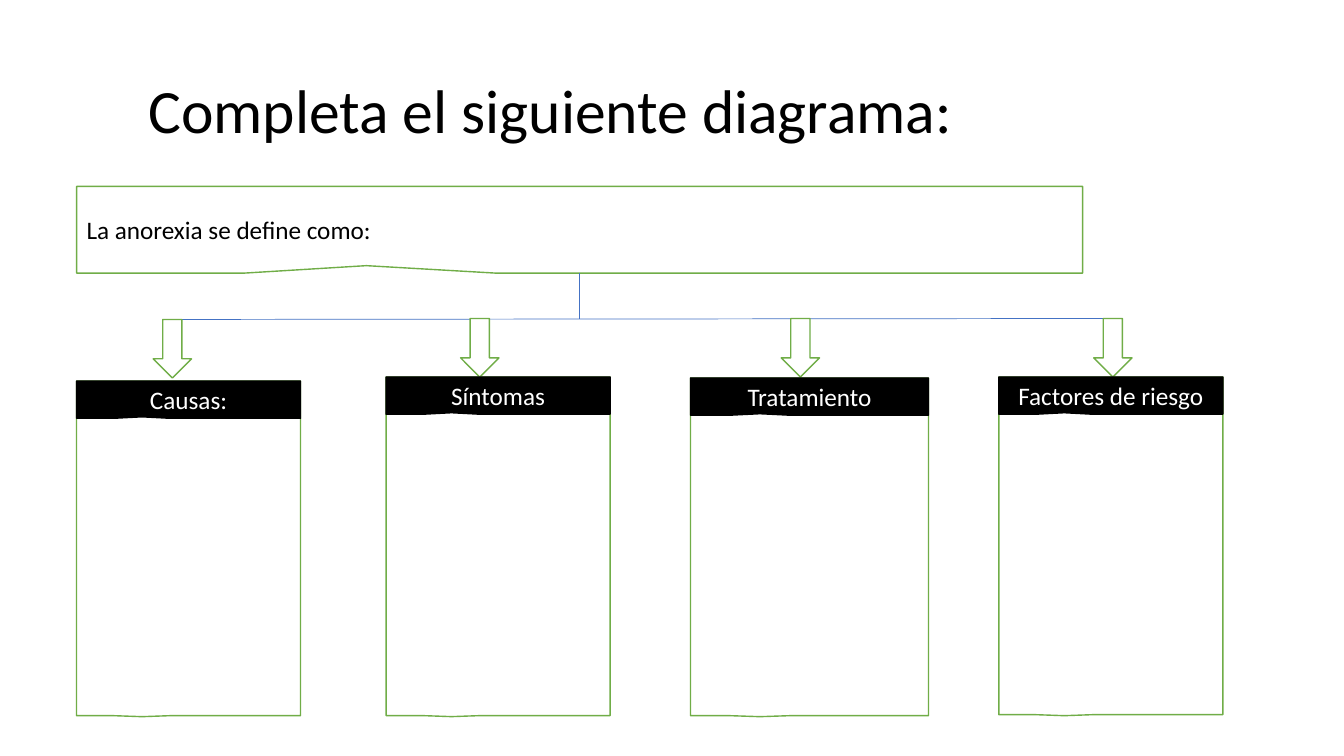
from lxml.etree import SubElement
from pptx import Presentation
from pptx.dml.color import RGBColor
from pptx.enum.shapes import MSO_CONNECTOR as Connector, MSO_SHAPE as Shape
from pptx.enum.text import MSO_ANCHOR as Anchor, PP_ALIGN as Align
from pptx.oxml.ns import qn
from pptx.util import Pt

THEME = {
    "font": "Calibri",
    "black": "000000",
    "white": "FFFFFF",
    "green": "70AD47",
    "blue": "4472C4",
    "title_size": 44,
    "body_size": 18,
    "outline": 1,
    "rule": 0.5,
}

TITLE = {"text": "Completa el siguiente diagrama:", "box": (0, 28.8, 828, 104.4), "indent": 106}
DEFINITION = {"text": "La anorexia se define como:", "box": (54.7, 133.2, 718.6, 61.9)}
COLUMNS = [
    {"heading": "Causas:", "left": 54.7, "top": 272.2, "width": 160, "bottom": 511.2, "arrow": (109.4, 228.2)},
    {"heading": "Síntomas", "left": 275.8, "top": 269.3, "width": 160, "bottom": 511.2, "arrow": (329, 227.5)},
    {"heading": "Tratamiento", "left": 493.2, "top": 270, "width": 170, "bottom": 511.2, "arrow": (558, 227.5)},
    {"heading": "Factores de riesgo", "left": 713.5, "top": 269.3, "width": 160, "bottom": 510.5, "arrow": (781.2, 227.5)},
]
HEADING_HEIGHT = 26.6
ARROW_SIZE = (27.4, 41.8)
BRANCH = (123.1, 228.2, 800, 227.5)
TIPS = {"definition": (-0.212, 0.414), "body": (-0.208, 0.503), "heading": (-0.208, 0.461)}


def color(name):
    return RGBColor.from_string(THEME[name])


def apply_format(target, values):
    for name, value in values.items():
        setattr(target, name, value)


def write(shape, text, size, ink, align=Align.LEFT, frame_format=None, spacing=1):
    frame = shape.text_frame
    apply_format(frame, {"word_wrap": True, "vertical_anchor": Anchor.MIDDLE, **(frame_format or {})})
    paragraph = frame.paragraphs[0]
    apply_format(paragraph, {"alignment": align, "line_spacing": spacing})
    run = paragraph.add_run()
    run.text = text
    apply_format(run.font, {"name": THEME["font"], "size": Pt(THEME[size])})
    run.font.color.rgb = color(ink)


def add_figure(slide, kind, box, fill="white", line="green", tip=()):
    shape = slide.shapes.add_shape(kind, *map(Pt, box))
    shape.shadow.inherit = False
    shape.fill.solid()
    shape.fill.fore_color.rgb = color(fill)
    shape.line.color.rgb = color(line)
    shape.line.width = Pt(THEME["outline"])
    for index, value in enumerate(tip):
        shape.adjustments[index] = value
    return shape


def add_line(slide, points):
    connector = slide.shapes.add_connector(Connector.STRAIGHT, *map(Pt, points))
    connector.line.color.rgb = color("blue")
    connector.line.width = Pt(THEME["rule"])
    SubElement(connector._element.spPr, qn("a:effectLst"))
    return connector


def build_slide(slide):
    title = slide.shapes.add_textbox(*map(Pt, TITLE["box"]))
    write(title, TITLE["text"], "title_size", "black",
          frame_format={"margin_left": Pt(TITLE["indent"])}, spacing=0.9)

    definition = add_figure(slide, Shape.RECTANGULAR_CALLOUT, DEFINITION["box"], tip=TIPS["definition"])
    write(definition, DEFINITION["text"], "body_size", "black")

    left, top, width, height = DEFINITION["box"]
    center = left + width / 2
    stem = add_line(slide, (center, top + height, center, BRANCH[1]))
    stem.begin_connect(definition, 2)
    add_line(slide, BRANCH)

    for column in COLUMNS:
        left, top, width = column["left"], column["top"], column["width"]
        add_figure(slide, Shape.DOWN_ARROW, column["arrow"] + ARROW_SIZE)
        add_figure(slide, Shape.RECTANGULAR_CALLOUT,
                   (left, top, width, column["bottom"] - top), tip=TIPS["body"])
        heading = add_figure(slide, Shape.RECTANGULAR_CALLOUT, (left, top, width, HEADING_HEIGHT),
                             "black", "black", TIPS["heading"])
        write(heading, column["heading"], "body_size", "white", Align.CENTER)


def main():
    presentation = Presentation()
    apply_format(presentation, {"slide_width": Pt(960), "slide_height": Pt(540)})
    build_slide(presentation.slides.add_slide(presentation.slide_layouts[6]))
    presentation.save("out.pptx")


if __name__ == "__main__":
    main()
